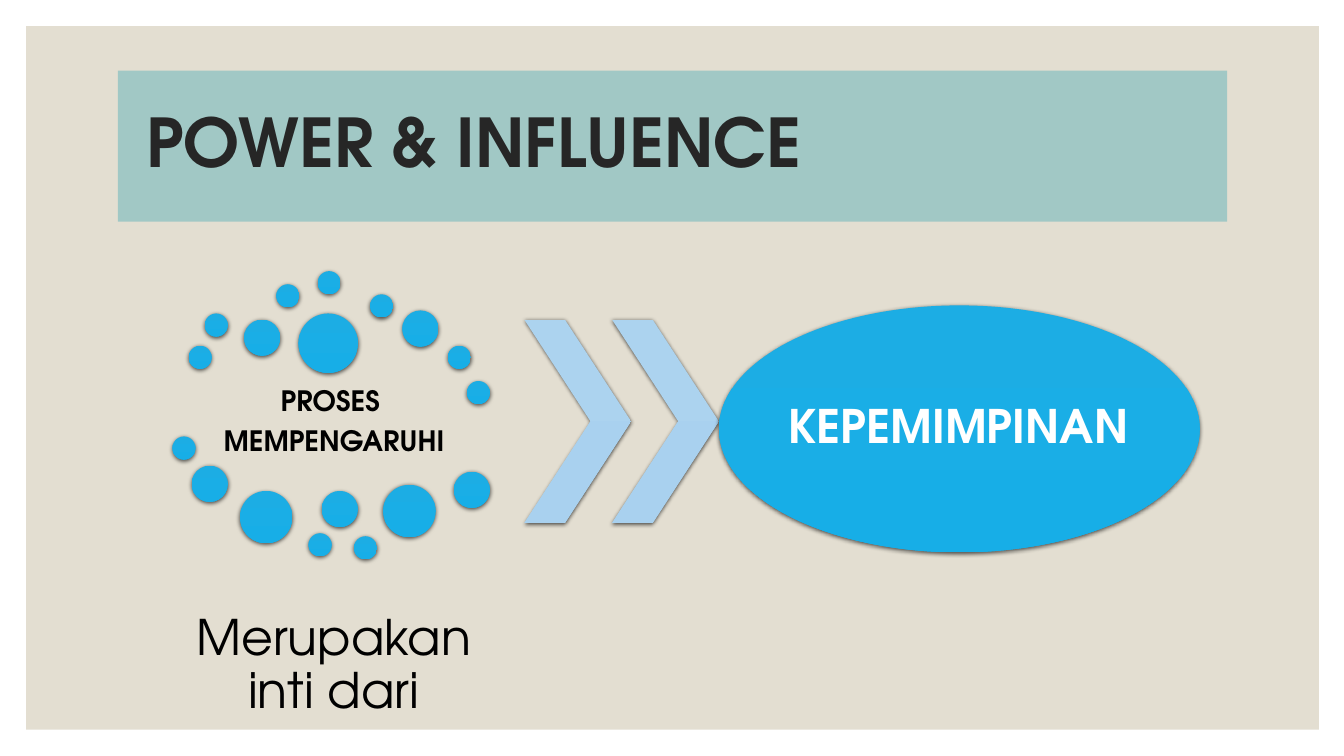
import pptx
import pptx.util
import pptx.dml.color
import pptx.enum.shapes
import pptx.enum.text
import pptx.oxml

RGBColor = pptx.dml.color.RGBColor
MSO_SHAPE = pptx.enum.shapes.MSO_SHAPE
PP_ALIGN = pptx.enum.text.PP_ALIGN

PX = 9144
FONT = "TeX Gyre Adventor"
SAND = RGBColor(0xE3, 0xDE, 0xD1)
TEAL = RGBColor(0xA1, 0xC8, 0xC5)
CHARCOAL = RGBColor(0x26, 0x26, 0x26)
BLACK = RGBColor(0, 0, 0)
WHITE = RGBColor(0xFF, 0xFF, 0xFF)
BLUE = (RGBColor(0x1C, 0xAD, 0xE4), RGBColor(0x17, 0xAE, 0xE7))
PALE_BLUE = (RGBColor(0xAC, 0xD3, 0xEF), RGBColor(0xA9, 0xD1, 0xEF))

SMALL, MEDIUM, LARGE, TOP = 23, 36, 52, 59
DOTS = [
    (187, 343, SMALL), (203, 311, SMALL), (242, 317, MEDIUM),
    (274, 282, SMALL), (315, 269, SMALL), (367, 292, SMALL),
    (399, 308, MEDIUM), (444, 343, SMALL), (463, 378, SMALL),
    (296, 311, TOP), (171, 433, SMALL), (190, 462, MEDIUM),
    (238, 487, LARGE), (306, 529, SMALL), (319, 487, MEDIUM),
    (351, 532, SMALL), (380, 481, LARGE), (450, 468, MEDIUM),
]

SHADOW = (
    '<a:effectLst xmlns:a="http://schemas.openxmlformats.org/drawingml/2006/main">'
    '<a:outerShdw blurRad="38100" dist="12700" dir="5400000" rotWithShape="0">'
    '<a:srgbClr val="000000"><a:alpha val="63000"/></a:srgbClr>'
    '</a:outerShdw></a:effectLst>'
)


def box(*lengths):
    return [pptx.util.Emu(n * PX) for n in lengths]


def add_run(p, text, size, color, bold):
    r = p.add_run()
    r.text = text
    r.font.name = FONT
    r.font.size = pptx.util.Pt(size)
    r.font.bold = bold
    r.font.color.rgb = color
    p.line_spacing = 0.9


def set_frame(tf, left, inset):
    tf.word_wrap = True
    tf.auto_size = pptx.enum.text.MSO_AUTO_SIZE.NONE
    tf.vertical_anchor = pptx.enum.text.MSO_ANCHOR.MIDDLE
    tf.margin_left, tf.margin_right, tf.margin_top, tf.margin_bottom = box(
        left, inset, inset, inset)


def add_panel(s, x, y, w, h, color):
    sp = s.shapes.add_shape(MSO_SHAPE.RECTANGLE, *box(x, y, w, h))
    sp.shadow.inherit = False
    sp.fill.solid()
    sp.fill.fore_color.rgb = color
    sp.line.fill.background()


def set_title(s, text):
    sp = s.shapes.title
    sp.left, sp.top, sp.width, sp.height = box(117, 70, 1100, 150)
    sp.fill.solid()
    sp.fill.fore_color.rgb = TEAL
    tf = sp.text_frame
    set_frame(tf, 28, 5)
    p = tf.paragraphs[0]
    p.alignment = PP_ALIGN.LEFT
    add_run(p, text, 48, CHARCOAL, True)


def add_glossy(s, kind, x, y, w, h, colors):
    sp = s.shapes.add_shape(kind, *box(x, y, w, h))
    sp.fill.gradient()
    sp.fill.gradient_angle = 270
    for stop, color in zip(sp.fill.gradient_stops, colors):
        stop.color.rgb = color
    sp.line.fill.background()
    sp._element.spPr.append(pptx.oxml.parse_xml(SHADOW))
    return sp


def add_label(s, x, y, w, h, lines, size, color, bold, inset):
    sp = s.shapes.add_textbox(*box(x, y, w, h))
    tf = sp.text_frame
    set_frame(tf, inset, inset)
    for i, line in enumerate(lines):
        p = tf.add_paragraph() if i else tf.paragraphs[0]
        p.alignment = PP_ALIGN.CENTER
        p.space_after = pptx.util.Pt(round(size * 0.35))
        add_run(p, line, size, color, bold)


def main():
    prs = pptx.Presentation()
    prs.slide_width, prs.slide_height = box(1333, 750)
    s = prs.slides.add_slide(prs.slide_layouts[5])

    add_panel(s, 26, 26, 1282, 698, SAND)
    title = s.shapes.title._element
    s.shapes._spTree.append(title)
    set_title(s, "POWER & INFLUENCE")

    add_label(s, 143, 372, 377, 95, ["PROSES ", "MEMPENGARUHI"], 20, BLACK, True, 3)
    add_label(s, 187, 572, 288, 178, ["Merupakan inti dari"], 35, BLACK, False, 5)

    for x, y, size in DOTS:
        add_glossy(s, MSO_SHAPE.OVAL, x, y, size, size, BLUE)
    for x in (520, 607):
        sp = add_glossy(s, MSO_SHAPE.CHEVRON, x, 317, 106, 202, PALE_BLUE)
        sp.adjustments[0] = 0.62

    add_glossy(s, MSO_SHAPE.OVAL, 713, 303, 477, 245, BLUE)
    add_label(s, 772, 339, 357, 173, ["KEPEMIMPINAN"], 33, WHITE, True, 0)

    prs.save("out.pptx")


if __name__ == "__main__":
    main()
